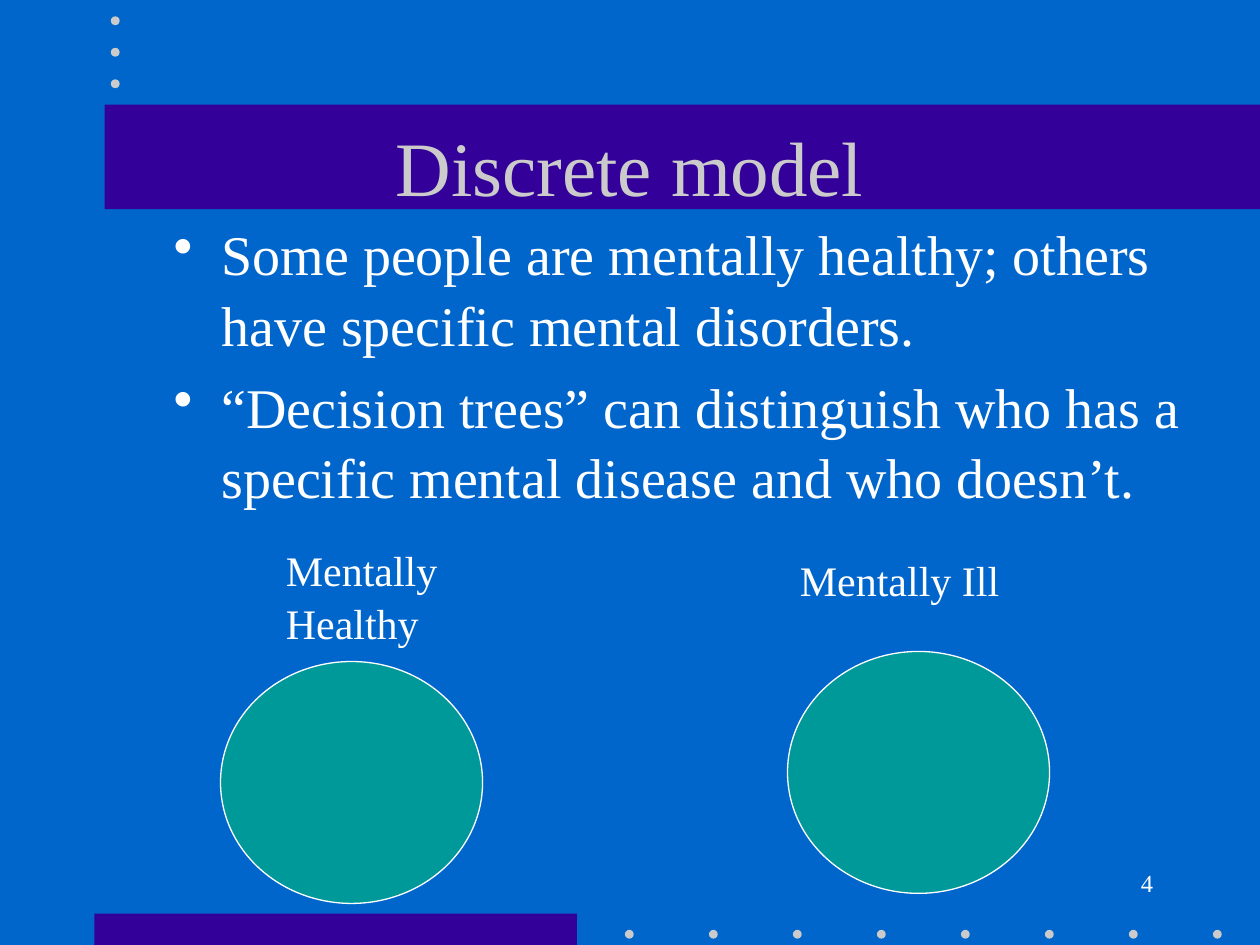
from lxml import etree
from pptx import Presentation
from pptx.dml.color import RGBColor
from pptx.enum import shapes, text
from pptx.oxml.ns import qn
from pptx.util import Inches, Pt

BLUE = RGBColor(0x00, 0x66, 0xCC)
PURPLE = RGBColor(0x33, 0x00, 0x99)
GREY = RGBColor(0xCB, 0xCB, 0xCB)
TEAL = RGBColor(0x00, 0x99, 0x99)
WHITE = RGBColor(0xFF, 0xFF, 0xFF)
FONT = "Times New Roman"
RECT, OVAL = shapes.MSO_SHAPE.RECTANGLE, shapes.MSO_SHAPE.OVAL
BULLETS = [
    "Some people are mentally healthy; others have specific mental disorders.",
    "“Decision trees” can distinguish who has a specific mental disease and who doesn’t.",
]


def add_shape(s, kind, x, y, w, h, fill, line=None):
    sp = s.shapes.add_shape(kind, Inches(x), Inches(y), Inches(w), Inches(h))
    sp.shadow.inherit = False
    sp.fill.solid()
    sp.fill.fore_color.rgb = fill
    if line is None:
        sp.line.fill.background()
    else:
        sp.line.color.rgb = line
        sp.line.width = Pt(0.75)


def add_text(s, x, y, w, h, lines, size, color=WHITE, align=text.PP_ALIGN.LEFT,
             anchor=text.MSO_ANCHOR.TOP):
    tf = s.shapes.add_textbox(Inches(x), Inches(y), Inches(w), Inches(h)).text_frame
    tf.word_wrap = True
    tf.vertical_anchor = anchor
    tf.text = "\n".join(lines)
    for p in tf.paragraphs:
        p.alignment = align
        p.line_spacing = 1.05
        p.font.name, p.font.size, p.font.color.rgb = FONT, Pt(size), color
    return tf


def add_dots(s, x, y, count, dx=0, dy=0):
    for i in range(count):
        add_shape(s, OVAL, x + i * dx, y + i * dy, 0.07, 0.07, GREY)


def add_decoration(s):
    add_shape(s, RECT, 0.75, 7.25, 3.83, 0.25, PURPLE)
    add_dots(s, 4.96, 7.38, 8, dx=2 / 3)
    add_shape(s, RECT, 0.83, 0.83, 9.17, 0.83, PURPLE)
    add_dots(s, 0.88, 0.13, 3, dy=0.25)


def add_bullets(s, x, y, w, h, lines):
    for p in add_text(s, x, y, w, h, lines, 32).paragraphs:
        p.space_before = Pt(6.4)
        pPr = p._p.get_or_add_pPr()
        pPr.set("marL", str(Inches(0.38)))
        pPr.set("indent", str(-Inches(0.38)))
        bullet = etree.Element(qn("a:buChar"), char="•")
        pPr.find(qn("a:spcBef")).addnext(bullet)


def add_group(s, x, y, label, label_dx, label_dy, label_w, label_h):
    """A circle at x, y with its label offset from the same corner."""
    add_shape(s, OVAL, x, y, 2.08, 1.92, TEAL, WHITE)
    add_text(s, x + label_dx, y + label_dy, label_w, label_h, [label], 24)


def main():
    prs = Presentation()
    prs.slide_width, prs.slide_height = Inches(10), Inches(7.5)
    s = prs.slides.add_slide(prs.slide_layouts[6])
    s.background.fill.solid()
    s.background.fill.fore_color.rgb = BLUE

    add_decoration(s)
    add_text(s, 7.17, 6.83, 2.08, 0.5, ["4"], 14, align=text.PP_ALIGN.RIGHT)
    add_text(s, 0.75, 0.67, 8.5, 1.25, ["Discrete model"], 44, GREY,
             text.PP_ALIGN.CENTER, text.MSO_ANCHOR.MIDDLE)
    add_bullets(s, 1.28, 1.67, 8.5, 4.96, BULLETS)
    add_group(s, 1.75, 5.25, "Mentally Healthy", 0.42, -1, 1.75, 0.9)
    add_group(s, 6.25, 5.17, "Mentally Ill", 0, -0.84, 1.83, 0.5)
    prs.save("out.pptx")


if __name__ == "__main__":
    main()
